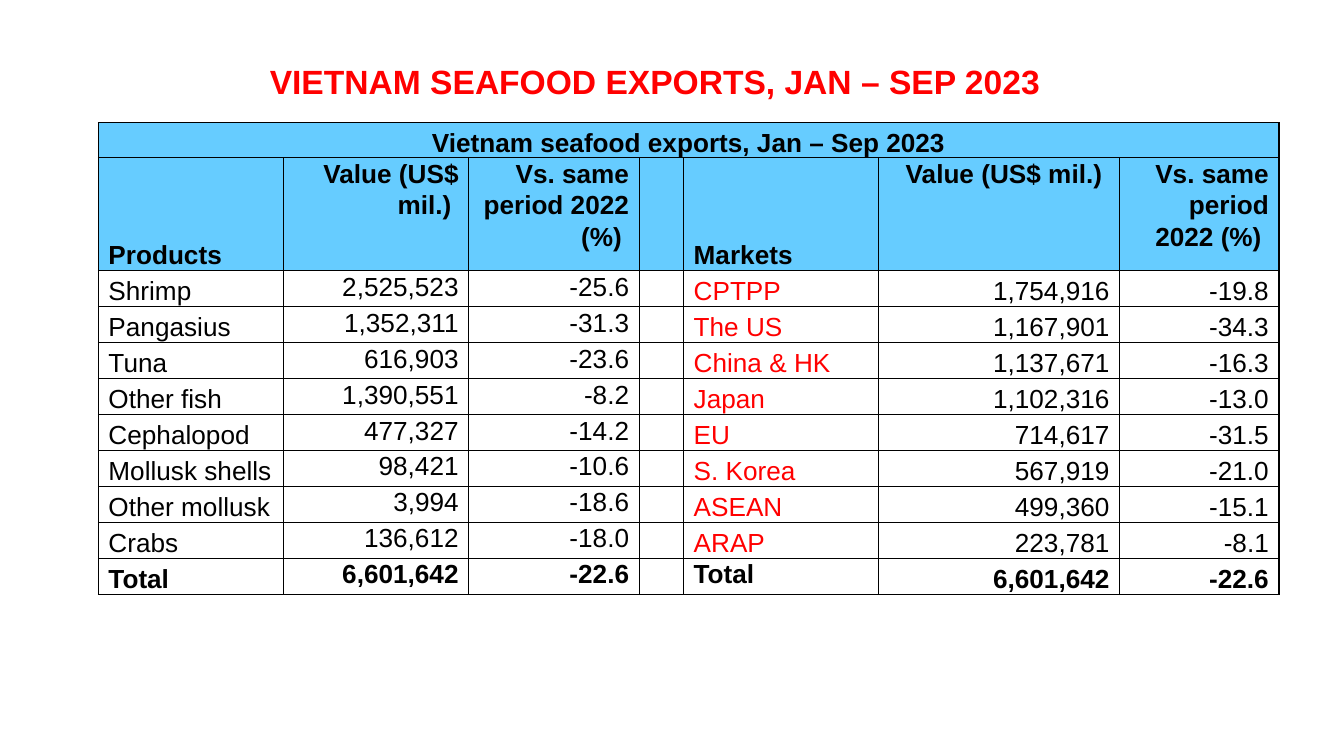
from lxml import etree
from pptx import Presentation
from pptx.dml.color import RGBColor
from pptx.enum.text import MSO_ANCHOR, MSO_AUTO_SIZE, PP_ALIGN
from pptx.oxml.ns import qn
from pptx.util import Cm, Pt

TOP, BOTTOM = MSO_ANCHOR.TOP, MSO_ANCHOR.BOTTOM
LEFT, MID, RIGHT = PP_ALIGN.LEFT, PP_ALIGN.CENTER, PP_ALIGN.RIGHT
NO_FIT = MSO_AUTO_SIZE.NONE

BLACK, RED, BLUE = "000000", "FF0000", "66CCFF"
COLS = [3.5, 3.5, 3.22, 0.84, 3.69, 4.55, 3.01]
BAND, HEAD, BODY = 0.66, 2.13, 0.68
GAP, MARKET = 3, 4
VALUE, CHANGE = "Value (US$ mil.) ", "Vs. same period 2022 (%) "
ROWS = [
    ["Products", VALUE, CHANGE, "", "Markets", VALUE, CHANGE],
    ["Shrimp", "2,525,523", "-25.6", "", "CPTPP", "1,754,916", "-19.8"],
    ["Pangasius", "1,352,311", "-31.3", "", "The US", "1,167,901", "-34.3"],
    ["Tuna", "616,903", "-23.6", "", "China & HK", "1,137,671", "-16.3"],
    ["Other fish", "1,390,551", "-8.2", "", "Japan", "1,102,316", "-13.0"],
    ["Cephalopod", "477,327", "-14.2", "", "EU", "714,617", "-31.5"],
    ["Mollusk shells", "98,421", "-10.6", "", "S. Korea", "567,919", "-21.0"],
    ["Other mollusk", "3,994", "-18.6", "", "ASEAN", "499,360", "-15.1"],
    ["Crabs", "136,612", "-18.0", "", "ARAP", "223,781", "-8.1"],
    ["Total", "6,601,642", "-22.6", "", "Total", "6,601,642", "-22.6"],
]
LAST = len(ROWS) - 1

CELL = {"margin_left": Cm(0.19), "margin_right": Cm(0.19),
        "margin_top": 0, "margin_bottom": 0}
FRAME = {"margin_left": Cm(0.25), "margin_right": Cm(0.25),
         "margin_top": Cm(0.13), "margin_bottom": Cm(0.13),
         "word_wrap": False, "auto_size": NO_FIT, "vertical_anchor": TOP}


def style(item, values):
    for name, value in values.items():
        setattr(item, name, value)


def color(code):
    return RGBColor.from_string(code)


def write(para, text, size, tint, bold, align):
    para.alignment = align
    run = para.add_run()
    run.text = text
    style(run.font, {"name": "Arial", "size": Pt(size), "bold": bold})
    run.font.color.rgb = color(tint)


def border(cell):
    props = cell._tc.get_or_add_tcPr()
    for side in ("a:lnL", "a:lnR", "a:lnT", "a:lnB"):
        line = etree.SubElement(props, qn(side), w=str(Pt(0.75)))
        fill = etree.SubElement(line, qn("a:solidFill"))
        etree.SubElement(fill, qn("a:srgbClr"), val=BLACK)


def fill_cell(cell, text, tint, bold, align, anchor, back=None):
    style(cell, {**CELL, "vertical_anchor": anchor})
    border(cell)
    if back:
        cell.fill.solid()
        cell.fill.fore_color.rgb = color(back)
    else:
        cell.fill.background()
    para = cell.text_frame.paragraphs[0]
    if text:
        para.line_spacing = 1.07
        write(para, text, 14, tint, bold, align)
    else:
        # A small end mark keeps an empty cell from stretching its row
        etree.SubElement(para._p, qn("a:endParaRPr"), sz="1000")


def add_title(slide, box):
    title = slide.shapes.title
    style(title, dict(zip(("left", "top", "width", "height"), box)))
    style(title.text_frame, FRAME)
    write(title.text_frame.paragraphs[0],
          "VIETNAM SEAFOOD EXPORTS, JAN – SEP 2023", 18, RED, True, MID)


def add_grid(slide, box):
    table = slide.shapes.add_table(len(ROWS) + 1, len(COLS), *box).table
    style(table, {"first_row": False, "horz_banding": False})
    for col, width in zip(table.columns, COLS):
        col.width = Cm(width)
    for row, height in zip(table.rows, [BAND, HEAD] + [BODY] * LAST):
        row.height = Cm(height)

    # Band across the top
    for c in range(len(COLS)):
        text = "" if c else "Vietnam seafood exports, Jan – Sep 2023"
        fill_cell(table.cell(0, c), text, BLACK, True, MID, BOTTOM, BLUE)
    table.cell(0, 0).merge(table.cell(0, len(COLS) - 1))

    # Header, body and total rows
    for r, row in enumerate(ROWS):
        head, total = r == 0, r == LAST
        for c, text in enumerate(row):
            label = c in (0, MARKET)
            low = c == 0 or (c == MARKET and not total)
            low = low or (c > MARKET and not head)
            red = c == MARKET and not (head or total)
            fill_cell(table.cell(r + 1, c), text, RED if red else BLACK,
                      head or total, LEFT if label or c == GAP else RIGHT,
                      BOTTOM if low else TOP, BLUE if head else None)


def main():
    deck = Presentation()
    style(deck, {"slide_width": Cm(25.4), "slide_height": Cm(14.29)})
    slide = deck.slides.add_slide(deck.slide_layouts[5])
    add_title(slide, (Cm(4.6), Cm(1.03), Cm(15.56), Cm(1.03)))
    add_grid(slide, (Cm(1.86), Cm(2.32), Cm(sum(COLS)),
                     Cm(BAND + HEAD + BODY * LAST)))
    deck.save("out.pptx")


if __name__ == "__main__":
    main()
